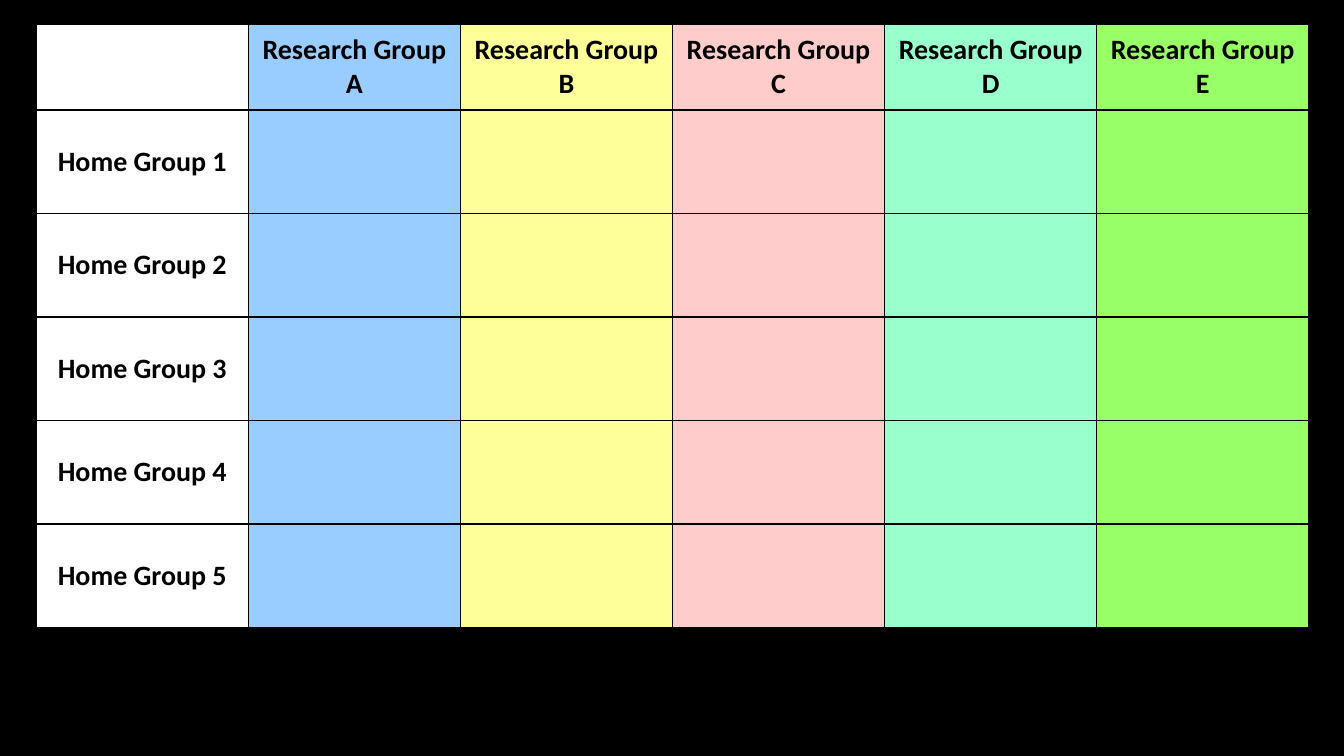
from lxml.etree import SubElement
from pptx import Presentation
from pptx.dml.color import RGBColor
from pptx.enum.text import MSO_ANCHOR, PP_ALIGN
from pptx.oxml.ns import qn
from pptx.util import Inches, Pt

# Content: column headings with their colours, then row headings
COLUMNS = [
    ("", "FFFFFF"),
    ("Research Group A", "99CCFF"),
    ("Research Group B", "FFFF99"),
    ("Research Group C", "FFCCCC"),
    ("Research Group D", "99FFCC"),
    ("Research Group E", "99FF66"),
]
HOME_GROUPS = [f"Home Group {n}" for n in range(1, 6)]
BLACK = "000000"

# Slide (16:9) and grid, in inches
SLIDE_W = 10
SLIDE_H = SLIDE_W * 9 / 16
LEFT, TOP, WIDTH = 0.27, 0.18, 9.47
HEADER_H, ROW_H = 0.64, 0.77


def paint(fill, color):
    fill.solid()
    fill.fore_color.rgb = RGBColor.from_string(color)


def add_borders(cell, color, width):
    tc_pr = cell._tc.get_or_add_tcPr()
    for i, side in enumerate(("a:lnL", "a:lnR", "a:lnT", "a:lnB")):
        ln = tc_pr.makeelement(qn(side), {"w": str(Pt(width))})
        SubElement(SubElement(ln, qn("a:solidFill")), qn("a:srgbClr"), val=color)
        tc_pr.insert(i, ln)  # borders come before the fill


def format_cell(cell, text, color):
    paint(cell.fill, color)
    add_borders(cell, BLACK, 1)
    cell.vertical_anchor = MSO_ANCHOR.MIDDLE
    cell.margin_left = cell.margin_right = Inches(0.08)
    cell.margin_top = cell.margin_bottom = Inches(0.04)
    p = cell.text_frame.paragraphs[0]
    p.alignment = PP_ALIGN.CENTER
    if text:
        r = p.add_run()
        r.text = text
        r.font.name, r.font.size, r.font.bold = "Calibri", Pt(15), True
        r.font.color.rgb = RGBColor.from_string(BLACK)


prs = Presentation()
prs.slide_width, prs.slide_height = Inches(SLIDE_W), Inches(SLIDE_H)
s = prs.slides.add_slide(prs.slide_layouts[6])
paint(s.background.fill, BLACK)

# Table
row_heights = [HEADER_H] + [ROW_H] * len(HOME_GROUPS)
table = s.shapes.add_table(
    len(row_heights), len(COLUMNS),
    Inches(LEFT), Inches(TOP), Inches(WIDTH), Inches(sum(row_heights)),
).table
table.first_row = table.horz_banding = False
for row, height in zip(table.rows, row_heights):
    row.height = Inches(height)

# Cells: headings along the top and down the left, column colours throughout
for c, (heading, color) in enumerate(COLUMNS):
    format_cell(table.cell(0, c), heading, color)
    for r, group in enumerate(HOME_GROUPS, start=1):
        format_cell(table.cell(r, c), group if c == 0 else "", color)

prs.save("out.pptx")
